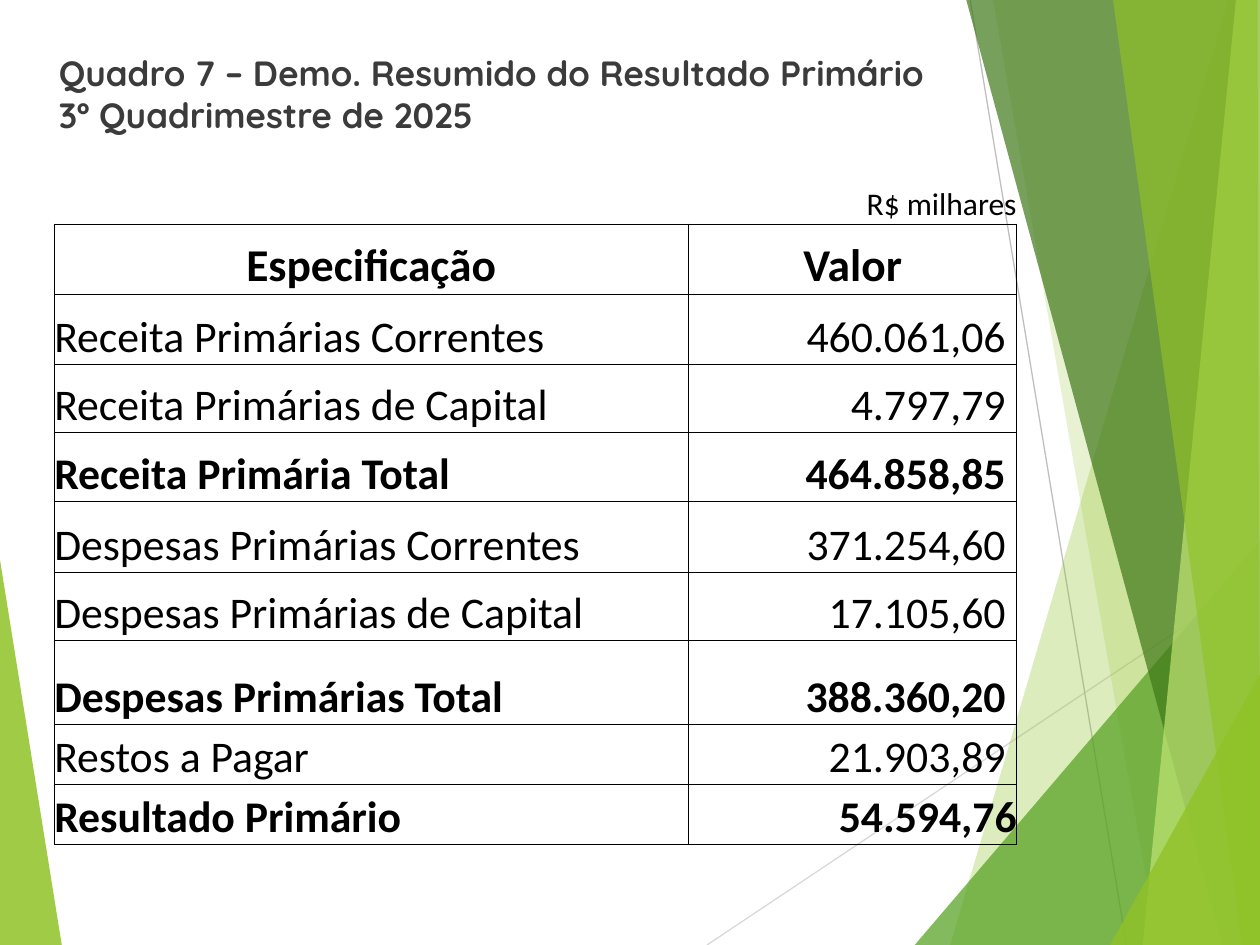
from lxml import etree
from pptx import Presentation
from pptx.dml.color import RGBColor
from pptx.enum import shapes, text
from pptx.oxml.ns import qn
from pptx.util import Pt

COLORS = {"lime": "90C226", "green": "54A021", "forest": "3F7819", "pale": "C0E474",
          "light_line": "D9D9D9", "mid_line": "BFBFBF", "title": "3B3B3B", "black": "000000"}
WIDTH, HEIGHT = 720, 540

# (colour, opacity in %, outline points)
LEFT_WEDGE = ("lime", 85, [(0, 320), (35.3, HEIGHT), (0, HEIGHT)])
RIGHT_FACETS = [
    ("lime", 30, [(702, 0), (543, HEIGHT), (WIDTH, HEIGHT), (WIDTH, 0)]),
    ("lime", 20, [(567.5, 0), (661.5, HEIGHT), (WIDTH, HEIGHT), (WIDTH, 0)]),
    ("green", 72, [(522.7, HEIGHT), (WIDTH, 309), (WIDTH, HEIGHT)]),
    ("forest", 70, [(552.2, 0), (698.5, HEIGHT), (WIDTH, HEIGHT), (WIDTH, 0)]),
    ("pale", 70, [(706.3, 0), (653, HEIGHT), (WIDTH, HEIGHT), (WIDTH, 0)]),
    ("lime", 65, [(636, 0), (710, HEIGHT), (WIDTH, HEIGHT), (718.6, 0)]),
    ("lime", 80, [(634.3, HEIGHT), (WIDTH, 385.2), (WIDTH, HEIGHT)]),
]
RAYS = [("light_line", (404, HEIGHT), (WIDTH, 329)),
        ("mid_line", (554.4, 0), (643.7, HEIGHT))]

TITLE = ["Quadro 7 – Demo. Resumido do Resultado Primário", "3º Quadrimestre de 2025"]
UNIT = "R$ milhares"
HEADER = ("Especificação", "Valor")
# (label, value, bold)
ROWS = [
    ("Receita Primárias Correntes", "460.061,06", False),
    ("Receita Primárias de Capital", "4.797,79", False),
    ("Receita Primária Total", "464.858,85", True),
    ("Despesas Primárias Correntes", "371.254,60", False),
    ("Despesas Primárias de Capital", "17.105,60", False),
    ("Despesas Primárias Total", "388.360,20", True),
    ("Restos a Pagar", "21.903,89", False),
    ("Resultado Primário", "54.594,76", True),
]
COL_WIDTHS = [93.8, 111, 111, 46.8, 187.4]
ROW_HEIGHTS = [71, 40, 40, 39, 39.5, 40.5, 39, 48, 34.3, 34.3]
VALUE_GAP = 6.4
LEFT, CENTER, RIGHT = text.PP_ALIGN.LEFT, text.PP_ALIGN.CENTER, text.PP_ALIGN.RIGHT


def rgb(name):
    return RGBColor.from_string(COLORS[name])


def add_facet(slide, color, opacity, points):
    points = [(Pt(x), Pt(y)) for x, y in points]
    builder = slide.shapes.build_freeform(*points[0])
    builder.add_line_segments(points[1:], close=True)
    sp = builder.convert_to_shape()
    sp.shadow.inherit = False
    sp.line.fill.background()
    sp.fill.solid()
    sp.fill.fore_color.rgb = rgb(color)
    clr = sp.fill._xPr.find(".//" + qn("a:srgbClr"))
    etree.SubElement(clr, qn("a:alpha"), val=str(opacity * 1000))


def add_ray(slide, color, start, end):
    ray = slide.shapes.add_connector(shapes.MSO_CONNECTOR.STRAIGHT,
                                     *(Pt(v) for v in start + end))
    ray.line.color.rgb = rgb(color)
    ray.line.width = Pt(0.75)
    etree.SubElement(ray._element.spPr, qn("a:effectLst"))


def set_borders(cell, visible):
    """Draw the named sides (of L, R, T, B) in black and hide the others."""
    tcPr = cell._tc.get_or_add_tcPr()
    for i, side in enumerate("LRTB"):
        ln = etree.Element(qn("a:ln" + side), w=str(Pt(0.5)))
        if side in visible:
            fill = etree.SubElement(ln, qn("a:solidFill"))
            etree.SubElement(fill, qn("a:srgbClr"), val=COLORS["black"])
        else:
            etree.SubElement(ln, qn("a:noFill"))
        tcPr.insert(i, ln)


def write_cell(cell, content, size, bold=False, align=LEFT, gap=0):
    cell.margin_right = Pt(gap)
    p = cell.text_frame.paragraphs[0]
    p.text = content
    p.alignment = align
    p.font.name, p.font.size, p.font.bold = "Calibri", Pt(size), bold
    p.font.color.rgb = rgb("black")


def add_title(slide):
    tf = slide.shapes.add_textbox(Pt(26.6), Pt(26), Pt(693), Pt(83)).text_frame
    tf.word_wrap = True
    p = tf.paragraphs[0]
    p.text = "\v".join(TITLE)
    p.font.name, p.font.size, p.font.bold = "Quicksand", Pt(20), True
    p.font.color.rgb = rgb("title")


def add_results_table(slide):
    table = slide.shapes.add_table(len(ROW_HEIGHTS), len(COL_WIDTHS), Pt(31), Pt(57),
                                   Pt(sum(COL_WIDTHS)), Pt(sum(ROW_HEIGHTS))).table
    table.first_row = table.horz_banding = False
    for col, width in zip(table.columns, COL_WIDTHS):
        col.width = Pt(width)
    last = len(COL_WIDTHS) - 1
    for r, height in enumerate(ROW_HEIGHTS):
        table.rows[r].height = Pt(height)
        for c in range(last + 1):
            cell = table.cell(r, c)
            cell.margin_left = cell.margin_right = cell.margin_top = cell.margin_bottom = 0
            cell.vertical_anchor = text.MSO_ANCHOR.BOTTOM
            cell.fill.background()
            set_borders(cell, "LRTB" if r else "B")
        if r:
            table.cell(r, 0).merge(table.cell(r, last - 1))

    write_cell(table.cell(0, last), UNIT, 18, align=RIGHT)
    for c, heading in zip((0, last), HEADER):
        write_cell(table.cell(1, c), heading, 26, True, CENTER)
    for r, (label, value, bold) in enumerate(ROWS, start=2):
        gap = 0 if r == len(ROW_HEIGHTS) - 1 else VALUE_GAP
        write_cell(table.cell(r, 0), label, 25, bold)
        write_cell(table.cell(r, last), value, 25, bold, RIGHT, gap)


def main():
    prs = Presentation()
    prs.slide_width, prs.slide_height = Pt(WIDTH), Pt(HEIGHT)
    slide = prs.slides.add_slide(prs.slide_layouts[6])
    add_facet(slide, *LEFT_WEDGE)
    for ray in RAYS:
        add_ray(slide, *ray)
    for facet in RIGHT_FACETS:
        add_facet(slide, *facet)
    add_title(slide)
    add_results_table(slide)
    prs.save("out.pptx")


if __name__ == "__main__":
    main()
